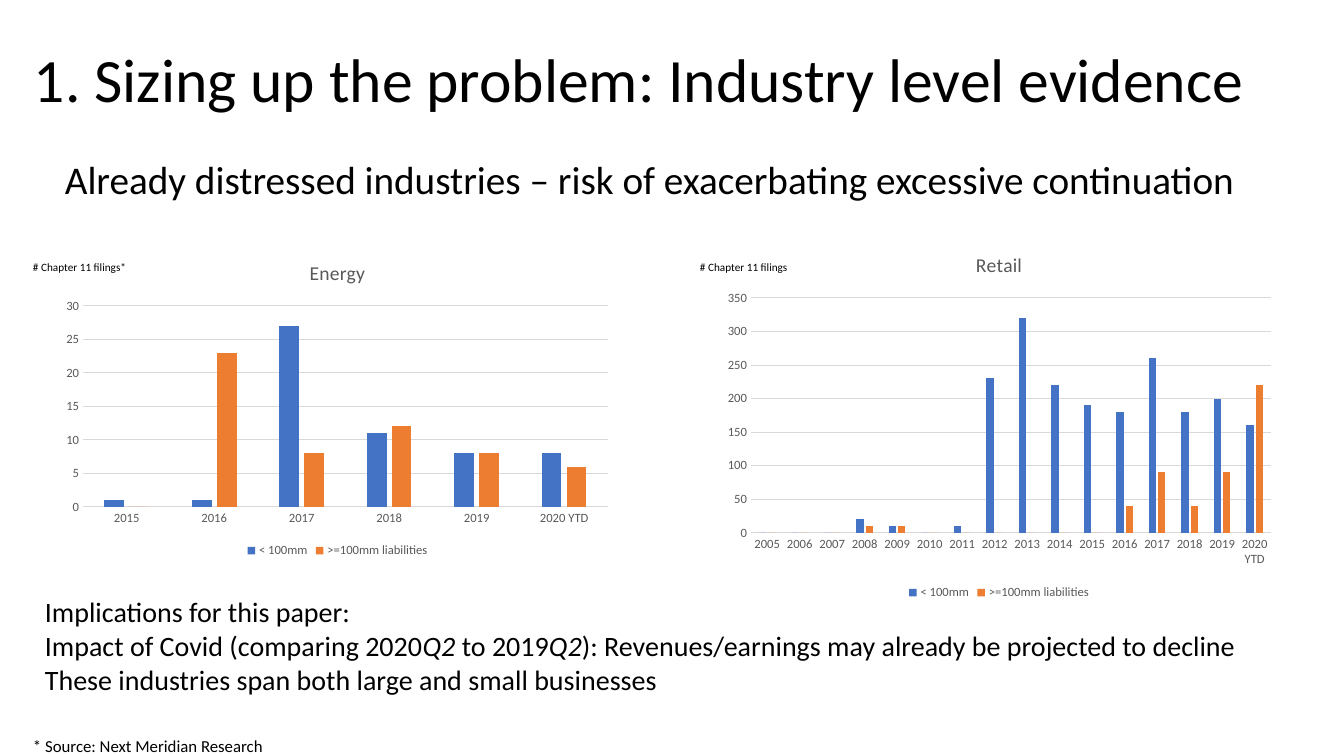
import pptx
import pptx.util
import pptx.chart.data
import pptx.enum.chart
import pptx.enum.text
import pptx.dml.color
import lxml.etree

BLACK = pptx.dml.color.RGBColor(0x00, 0x00, 0x00)
GREY = pptx.dml.color.RGBColor(0x59, 0x59, 0x59)
RULE = pptx.dml.color.RGBColor(0xD9, 0xD9, 0xD9)
BLUE = pptx.dml.color.RGBColor(0x44, 0x72, 0xC4)
ORANGE = pptx.dml.color.RGBColor(0xED, 0x7D, 0x31)
FONT = "Calibri"
W, H = 1344, 756
EMU_PER_PX = 12192000 / W

ENERGY_YEARS = [str(y) for y in range(2015, 2020)] + ["2020 YTD"]
ENERGY = ([1, 1, 27, 11, 8, 8], [0, 23, 8, 12, 8, 6])
RETAIL_YEARS = [str(y) for y in range(2005, 2020)] + ["2020 YTD"]
RETAIL = (
    [0, 0, 0, 20, 10, 0, 10, 230, 320, 220, 190, 180, 260, 180, 200, 160],
    [0, 0, 0, 10, 10, 0, 0, 0, 0, 0, 0, 40, 90, 40, 90, 220],
)


def px(n):
    return pptx.util.Emu(int(n * EMU_PER_PX))


def style(font, size, color):
    font.name = FONT
    font.size = pptx.util.Pt(size)
    font.bold = False
    font.color.rgb = color


def add_text(s, box, *paragraphs, size, spacing=1.0, before=0, middle=False):
    tf = s.shapes.add_textbox(*map(px, box)).text_frame
    tf.word_wrap = True
    if middle:
        tf.vertical_anchor = pptx.enum.text.MSO_ANCHOR.MIDDLE
    for i, runs in enumerate(paragraphs):
        p = tf.add_paragraph() if i else tf.paragraphs[0]
        p.line_spacing = spacing
        p.space_before = pptx.util.Pt(before)
        for j, text in enumerate([runs] if isinstance(runs, str) else runs):
            r = p.add_run()
            r.text = text
            style(r.font, size, BLACK)
            r.font.italic = j % 2 == 1


def place_plot(chart, box, plot):
    x, y, w, h = box
    left, top, width, height = plot
    c = "http://schemas.openxmlformats.org/drawingml/2006/chart"
    area = chart._chartSpace.chart.plotArea
    for old in area.findall(f"{{{c}}}layout"):
        area.remove(old)
    layout = lxml.etree.Element(f"{{{c}}}layout")
    manual = lxml.etree.SubElement(layout, f"{{{c}}}manualLayout")
    for tag, val in (
        ("layoutTarget", "inner"), ("xMode", "edge"), ("yMode", "edge"),
        ("x", (left - x) / w), ("y", (top - y) / h),
        ("w", width / w), ("h", height / h),
    ):
        lxml.etree.SubElement(manual, f"{{{c}}}{tag}").set("val", str(val))
    area.insert(0, layout)


def add_filings_chart(s, box, plot, title, years, values, top, step):
    data = pptx.chart.data.CategoryChartData()
    data.categories = years
    for name, vals in zip(("< 100mm", ">=100mm liabilities"), values):
        data.add_series(name, vals)
    kind = pptx.enum.chart.XL_CHART_TYPE.COLUMN_CLUSTERED
    chart = s.shapes.add_chart(kind, *map(px, box), data).chart
    style(chart.font, 10, BLACK)
    chart.has_title = True
    tf = chart.chart_title.text_frame
    tf.text = title
    style(tf.paragraphs[0].runs[0].font, 14, GREY)
    chart.chart_title.include_in_layout = False
    chart.has_legend = True
    chart.legend.position = pptx.enum.chart.XL_LEGEND_POSITION.BOTTOM
    chart.legend.include_in_layout = False
    style(chart.legend.font, 9, GREY)

    cat, val = chart.category_axis, chart.value_axis
    for axis in (cat, val):
        axis.major_tick_mark = pptx.enum.chart.XL_TICK_MARK.NONE
        axis.minor_tick_mark = pptx.enum.chart.XL_TICK_MARK.NONE
        style(axis.tick_labels.font, 9, GREY)
    val.minimum_scale, val.maximum_scale, val.major_unit = 0, top, step
    val.format.line.fill.background()
    for line in (cat.format.line, val.major_gridlines.format.line):
        line.color.rgb = RULE
        line.width = pptx.util.Pt(0.75)

    bars = chart.plots[0]
    bars.gap_width, bars.overlap = 219, -27
    bars.vary_by_categories = False
    for series, color in zip(bars.series, (BLUE, ORANGE)):
        series.format.fill.solid()
        series.format.fill.fore_color.rgb = color
    place_plot(chart, box, plot)


def add_heading(s, box):
    x, y, w, h = box
    add_text(s, (x, y, w, 146), "1. Sizing up the problem: Industry level evidence",
             size=44, spacing=0.9, middle=True)
    add_text(s, (x + 31, y + 146, w - 114, h - 146),
             "Already distressed industries – risk of exacerbating excessive continuation",
             size=28, spacing=0.9, before=10)


def add_charts(s, box):
    x, y, w, h = box
    add_filings_chart(s, (x + 32, y + 9, 565, 318), (x + 60, y + 71, 525, 201),
                      "Energy", ENERGY_YEARS, ENERGY, 30, 5)
    add_filings_chart(s, (x + 693, y, 566, h), (x + 728, y + 63, 520, 235),
                      "Retail", RETAIL_YEARS, RETAIL, 350, 50)
    add_text(s, (x, y + 20, 121, 24), "# Chapter 11 filings*", size=8)
    add_text(s, (x + 667, y + 20, 109, 24), "# Chapter 11 filings", size=8)


def add_notes(s, box):
    x, y, w, h = box
    add_text(s, (x + 12, y, w, 112), "Implications for this paper:",
             ("Impact of Covid (comparing 2020", "Q2", " to 2019", "Q2",
              "): Revenues/earnings may already be projected to decline "
              "These industries span both large and small businesses"), size=20)
    add_text(s, (x, y + 141, 592, 30), "* Source: Next Meridian Research", size=12)


def main():
    prs = pptx.Presentation()
    prs.slide_width, prs.slide_height = px(W), px(H)
    s = prs.slides.add_slide(prs.slide_layouts[6])
    add_heading(s, (24, 10, 1332, 216))
    add_charts(s, (23, 235, 1259, 369))
    add_notes(s, (23, 590, 1259, 171))
    prs.save("out.pptx")


if __name__ == "__main__":
    main()
